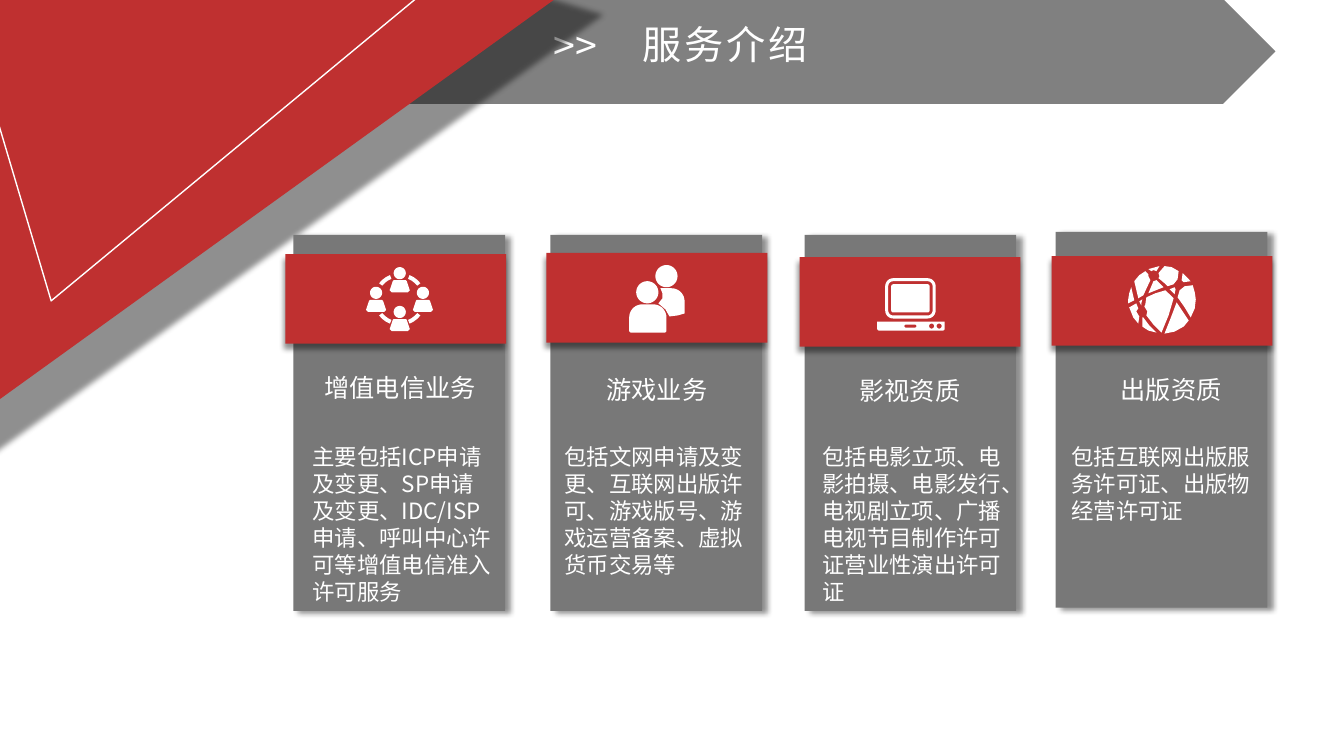
from dataclasses import dataclass
from math import cos, radians, sin

from lxml.etree import SubElement
from pptx import Presentation
from pptx.dml.color import RGBColor
from pptx.enum.shapes import MSO_SHAPE
from pptx.enum.text import MSO_ANCHOR, MSO_AUTO_SIZE, PP_ALIGN
from pptx.oxml.ns import qn
from pptx.util import Inches, Pt


@dataclass(frozen=True)
class Theme:
    red: str = "BF3030"
    bar: str = "808080"
    card: str = "787878"
    white: str = "FFFFFF"
    shadow: str = "000000"
    cjk: str = "Noto Sans CJK SC"
    latin: str = "Arial"
    title: int = 28
    heading: int = 18
    body: int = 16


# Icon outlines are lists of closed contours, in hundredths of an inch.
def arc(cx, cy, r, start, end, step=10):
    return [(cx + r * cos(radians(a)), cy + r * sin(radians(a)))
            for a in range(start, end + 1, step)]


def disc(cx, cy, r):
    return arc(cx, cy, r, 0, 350)


def round_rect(x, y, w, h, top, bottom=None):
    """Rectangle with one radius for the top corners and one for the bottom."""
    b = top if bottom is None else bottom
    return (arc(x + top, y + top, top, 180, 270)
            + arc(x + w - top, y + top, top, 270, 360)
            + arc(x + w - b, y + h - b, b, 0, 90)
            + arc(x + b, y + h - b, b, 90, 180))


def team_icon():
    contours = []
    for x, y in [(33.5, 6), (10, 25.5), (56.5, 25.5), (33.5, 44.5)]:
        contours += [disc(x, y, 6),
                     [(x - 6, y + 7), (x + 6, y + 7), (x + 7, y + 8),
                      (x + 10, y + 17), (x + 8, y + 19), (x - 8, y + 19),
                      (x - 10, y + 17), (x - 7, y + 8)]]
    for start in (38, 112, 218, 292):
        contours.append(arc(33.5, 32, 26, start, start + 30)
                        + arc(33.5, 32, 22, start, start + 30)[::-1])
    return contours


def players_icon():
    back_body = ([(31, 23), (41, 23)] + arc(42, 36, 13, 270, 360)
                 + [(55, 48), (48, 50), (40, 51), (36, 44), (29, 38),
                    (33, 33), (33, 28)])
    return [disc(18, 27, 11), round_rect(0, 39, 37, 28, 13, 2),
            disc(37, 11, 11), back_body]


def computer_icon():
    bezels = [round_rect(8 + d, d, 50 - 2 * d, 40 - 2 * d, 8 - d)
              for d in (0, 3, 6)]
    return bezels + [round_rect(0, 43, 67, 9, 0, 2),
                     round_rect(27, 46, 12, 3, 1.5),
                     disc(54, 47.5, 2.5), disc(61.5, 47.5, 2.5)]


def globe_icon():
    return [
        [(62, 51), (56, 41), (49, 31), (51, 24), (56, 20), (64, 19), (66, 26),
         (67, 33), (66, 42)],
        [(50, 5), (49, 13), (45, 18), (39, 20), (36, 17), (30, 12), (31, 10),
         (30, 7), (36, 0), (43, 1)],
        [(28, 5), (25, 4), (23, 5), (20, 3), (31, 0)],
        [(25, 15), (28, 14), (35, 21), (20, 27)],
        [(13, 37), (13, 39), (11, 35), (14, 33)],
        [(14, 51), (15, 51), (21, 59), (28, 66), (20, 64), (14, 60)],
        [(18, 49), (19, 45), (16, 40), (17, 38), (18, 31), (27, 27), (37, 24),
         (45, 32), (40, 49), (33, 66), (25, 58)],
        [(41, 23), (46, 21), (47, 23), (46, 28)],
        [(62, 15), (55, 16), (53, 14), (54, 7), (58, 11)],
        [(17, 5), (20, 8), (20, 10), (22, 14), (15, 29), (10, 32), (6, 15),
         (11, 9)],
        [(3, 21), (6, 34), (0, 37), (0, 33), (1, 27)],
        [(1, 41), (8, 37), (10, 42), (8, 45), (11, 50), (10, 57), (5, 51)],
        [(36, 67), (42, 52), (48, 36), (60, 54), (55, 60), (46, 65)],
    ]


class Deck:
    def __init__(self, theme):
        self.theme = theme
        self.prs = Presentation()
        self.prs.slide_width, self.prs.slide_height = Inches(13.33), Inches(7.5)
        self.s = self.prs.slides.add_slide(self.prs.slide_layouts[5])
        self.shapes = self.s.shapes

    def start_group(self):
        self.shapes = self.s.shapes.add_group_shape().shapes

    def shape(self, kind, box, fill=None, line=None, rotation=0, shadow=None):
        sp = self.shapes.add_shape(kind, *map(Inches, box))
        sp.rotation = rotation
        self.paint(sp, fill, line)
        if shadow:
            self.cast_shadow(sp, *shadow)

    def paint(self, sp, fill, line=None):
        sp.shadow.inherit = False
        if fill:
            sp.fill.solid()
            sp.fill.fore_color.rgb = RGBColor.from_string(fill)
        else:
            sp.fill.background()
        if line:
            sp.line.color.rgb = RGBColor.from_string(line)
            sp.line.width = Pt(1)
        else:
            sp.line.fill.background()

    def cast_shadow(self, sp, distance, angle):
        effects = sp._element.spPr.find(qn("a:effectLst"))
        outer = SubElement(effects, qn("a:outerShdw"), blurRad=str(Pt(4)),
                           dist=str(Pt(distance)), dir=str(angle * 60000),
                           algn="ctr", rotWithShape="0")
        color = SubElement(outer, qn("a:srgbClr"), val=self.theme.shadow)
        SubElement(color, qn("a:alpha"), val="43000")

    def icon(self, x, y, contours):
        outlines = [[(Inches(px / 100), Inches(py / 100)) for px, py in c]
                    for c in contours]
        builder = self.shapes.build_freeform(*outlines[0][0])
        for i, points in enumerate(outlines):
            if i:
                builder.move_to(*points[0])
            builder.add_line_segments(points[1:], close=True)
        self.paint(builder.convert_to_shape(Inches(x), Inches(y)),
                   self.theme.white)

    def title(self, box, text):
        sp = self.s.shapes.title
        self.s.shapes._spTree.append(sp._element)  # bring in front of the bar
        self.set_text(sp, box, text, self.theme.title, PP_ALIGN.JUSTIFY,
                      spacing=2)

    def text(self, box, text, size, align=PP_ALIGN.LEFT, font=None):
        sp = self.shapes.add_textbox(*map(Inches, box))
        self.set_text(sp, box, text, size, align, font)

    def set_text(self, sp, box, text, size, align, font=None, spacing=0):
        sp.left, sp.top, sp.width, sp.height = map(Inches, box)
        tf = sp.text_frame
        tf.text = text
        tf.word_wrap = True
        tf.auto_size = MSO_AUTO_SIZE.SHAPE_TO_FIT_TEXT
        tf.vertical_anchor = MSO_ANCHOR.TOP
        p = tf.paragraphs[0]
        p.alignment = align
        p.font.size = Pt(size)
        p.font.name = font or self.theme.cjk
        p.font.color.rgb = RGBColor.from_string(self.theme.white)
        SubElement(p.font._rPr, qn("a:ea"), typeface=self.theme.cjk)
        if spacing:
            p.font._rPr.set("spc", str(spacing * 100))

    def card(self, panel, band, icon, heading, body):
        t = self.theme
        self.start_group()
        self.shape(MSO_SHAPE.RECTANGLE, (*panel, 2.1, 3.73), t.card,
                   shadow=(4, 20))
        self.shape(MSO_SHAPE.RECTANGLE, (*band, 2.19, 0.89), t.red,
                   shadow=(4, 100))
        self.icon(*icon)
        x, y, text, align, font = heading
        self.text((x, y, 1.77, 0.4), text, t.heading, align, font)
        x, height, text, font = body
        self.text((x, 4.35, 1.98, height), text, t.body, font=font)


def main():
    t = Theme()
    deck = Deck(t)
    deck.shape(MSO_SHAPE.PENTAGON, (0.87, -0.01, 11.78, 1.04), t.bar)
    deck.title((6.27, 0.15, 3.42, 0.57), "服务介绍")
    deck.text((5.39, 0.16, 0.77, 0.57), ">>", t.title)
    deck.shape(MSO_SHAPE.ISOSCELES_TRIANGLE, (-6.18, -3.45, 10.8, 7.14), t.red,
               rotation=324.2, shadow=(30, 45))
    deck.shape(MSO_SHAPE.ISOSCELES_TRIANGLE, (-1.77, -1.34, 5.84, 4.42),
               line=t.white, rotation=196.9)

    left, center = PP_ALIGN.LEFT, PP_ALIGN.CENTER
    deck.card((2.91, 2.33), (2.83, 2.52), (3.63, 2.65, team_icon()),
              (3.12, 3.64, "增值电信业务", left, t.cjk),
              (3, 1.72, "主要包括ICP申请及变更、SP申请及变更、IDC/ISP申请、"
               "呼叫中心许可等增值电信准入许可服务", t.cjk))
    deck.card((5.46, 2.33), (5.42, 2.51), (6.24, 2.63, players_icon()),
              (5.63, 3.66, "游戏业务", center, t.cjk),
              (5.5, 1.45, "包括文网申请及变更、互联网出版许可、游戏版号、"
               "游戏运营备案、虚拟货币交易等", t.cjk))
    deck.card((7.98, 2.33), (7.93, 2.55), (8.7, 2.76, computer_icon()),
              (8.14, 3.67, "影视资质", center, t.latin),
              (8.06, 1.72, "包括电影立项、电影拍摄、电影发行、电视剧立项、"
               "广播电视节目制作许可证营业性演出许可证", t.cjk))
    deck.card((10.47, 2.3), (10.43, 2.54), (11.19, 2.64, globe_icon()),
              (10.73, 3.66, "出版资质", center, t.latin),
              (10.53, 0.91, "包括互联网出版服务许可证、出版物经营许可证", t.latin))
    deck.prs.save("out.pptx")


if __name__ == "__main__":
    main()
